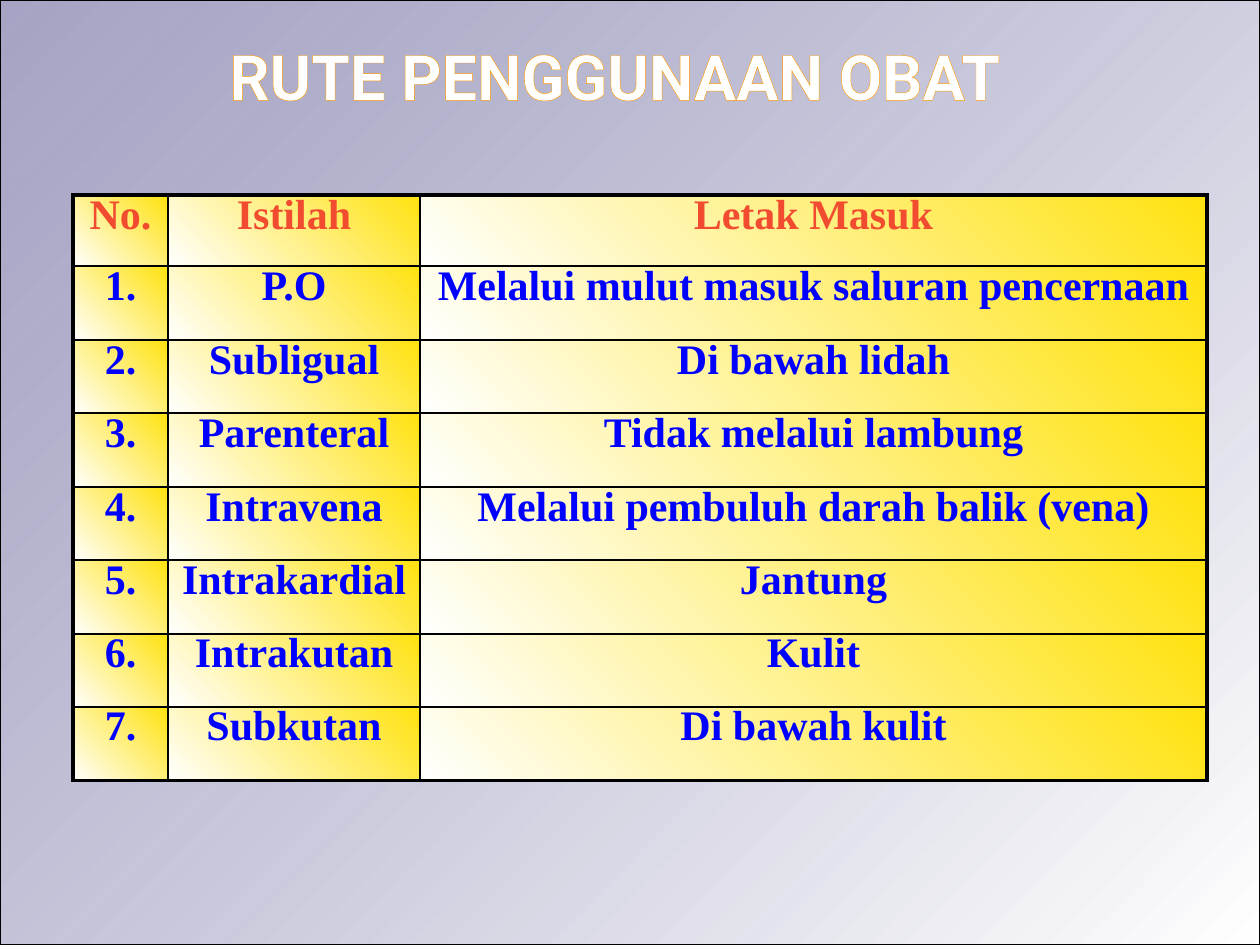
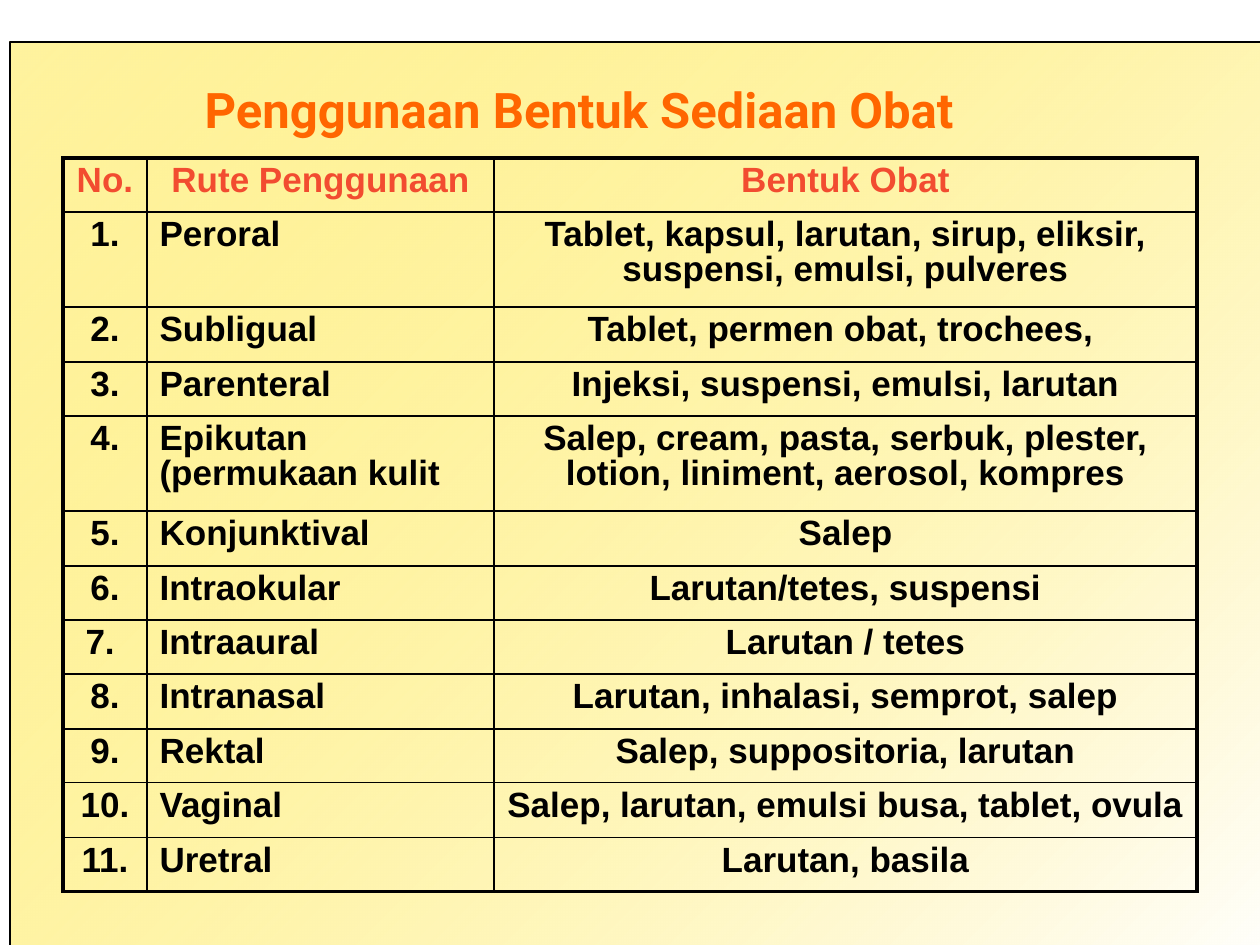
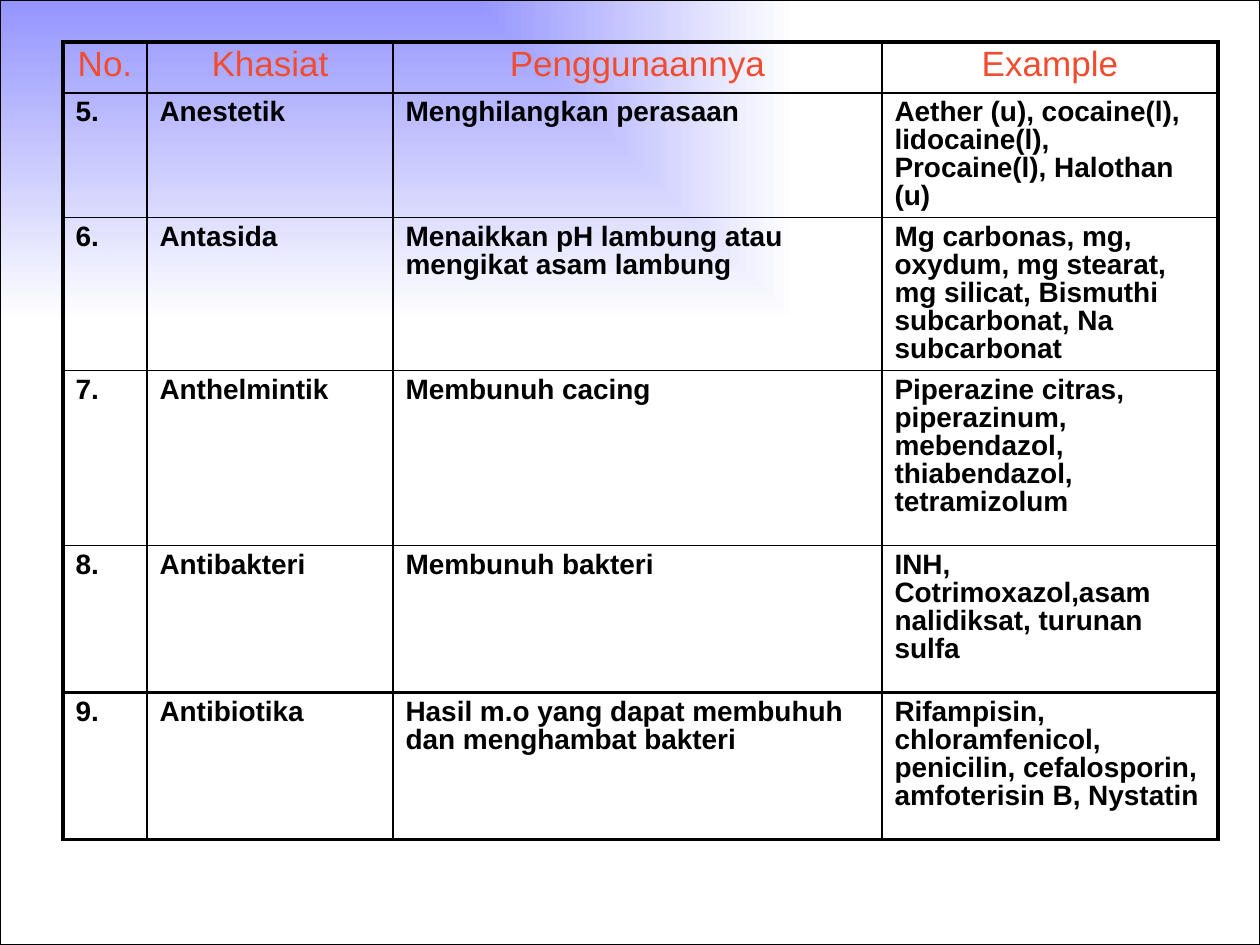
"""Build three slides of tables on drug routes, dosage forms and drug effects."""
from lxml import etree
from pptx import Presentation
from pptx import util as u
from pptx.dml.color import RGBColor
from pptx.enum import shapes, text
from pptx.oxml import ns

PX = 914400 / 126
WIDTH, HEIGHT = 1260, 945
BLACK, WHITE, HEADER = "000000", "FFFFFF", "F24C30"
YELLOW = "FFE20F"
THIN, THICK = 1, 2.25
LEFT, CENTER = text.PP_ALIGN.LEFT, text.PP_ALIGN.CENTER
TITLE_LAYOUT, BLANK_LAYOUT = 5, 6

DIAGONAL = {"ang": "2700000"}
RISING = {"ang": "18900000"}

SLIDES = [
    {
        "panel": {"at": (0, 0), "stops": [("8583AF", 73), (WHITE, 100)], "linear": DIAGONAL},
        "title": {"text": "RUTE PENGGUNAAN OBAT", "at": (179, 31, 872, 78),
                  "size": 36, "color": WHITE, "outline": "FF9900"},
        "table": {
            "at": (73, 195), "columns": [95, 252, 787],
            "heights": [71, 74, 73, 74, 73, 74, 73, 74],
            "font": "Times New Roman", "spacing": 0.75, "sizes": (24, 24),
            "header_bold": True, "color": "0000FF", "align": [CENTER] * 3,
            "stops": [(WHITE, 100), (YELLOW, 100)], "thick_rows": [],
            "rows": [
                ("No.", "Istilah", "Letak Masuk"),
                ("1.", "P.O", "Melalui mulut masuk saluran pencernaan"),
                ("2.", "Subligual", "Di bawah lidah"),
                ("3.", "Parenteral", "Tidak melalui lambung"),
                ("4.", "Intravena", "Melalui pembuluh darah balik (vena)"),
                ("5.", "Intrakardial", "Jantung"),
                ("6.", "Intrakutan", "Kulit"),
                ("7.", "Subkutan", "Di bawah kulit"),
            ],
        },
    },
    {
        "panel": {"at": (10, 42), "stops": [(YELLOW, 40), (WHITE, 100)], "linear": DIAGONAL},
        "title": {"text": "Penggunaan Bentuk Sediaan Obat", "at": (179, 73, 800, 94),
                  "size": 28, "color": "FF6600", "outline": BLACK},
        "table": {
            "at": (63, 158), "columns": [84, 347, 703],
            "heights": [54, 95, 55, 54, 95, 55, 54, 54, 55, 54, 55, 54],
            "font": "Arial", "spacing": 0.9, "sizes": (20, 20),
            "header_bold": True, "color": BLACK, "align": [CENTER, LEFT, CENTER],
            "stops": None, "thick_rows": [],
            "rows": [
                ("No.", "Rute Penggunaan", "Bentuk Obat"),
                ("1.", "Peroral",
                 "Tablet, kapsul, larutan, sirup, eliksir, suspensi, emulsi, pulveres"),
                ("2.", "Subligual", "Tablet, permen obat, trochees, "),
                ("3.", "Parenteral", "Injeksi, suspensi, emulsi, larutan"),
                ("4.", "Epikutan (permukaan kulit",
                 "Salep, cream, pasta, serbuk, plester, lotion, liniment, aerosol, kompres"),
                ("5.", "Konjunktival", "Salep"),
                ("6.", "Intraokular", "Larutan/tetes, suspensi"),
                ("7. ", "Intraaural", "Larutan / tetes"),
                ("8.", "Intranasal", "Larutan, inhalasi, semprot, salep"),
                ("9.", "Rektal", "Salep, suppositoria, larutan"),
                ("10.", "Vaginal", "Salep, larutan, emulsi busa, tablet, ovula"),
                ("11.", "Uretral", "Larutan, basila"),
            ],
        },
    },
    {
        "panel": {"at": (0, 0), "stops": [("0000FF", 62), (WHITE, 62)], "linear": None},
        "title": None,
        "table": {
            "at": (63, 42), "columns": [84, 246, 489, 336],
            "heights": [51, 124, 153, 175, 147, 147],
            "font": "Arial", "spacing": 0.9, "sizes": (20, 16),
            "header_bold": False, "color": BLACK, "align": [LEFT] * 4,
            "stops": None, "thick_rows": [4],
            "rows": [
                ("No.", "Khasiat", "Penggunaannya", "Example"),
                ("5.", "Anestetik", "Menghilangkan perasaan",
                 "Aether (u), cocaine(l), lidocaine(l), Procaine(l), Halothan (u)"),
                ("6.", "Antasida", "Menaikkan pH lambung atau mengikat asam lambung",
                 "Mg carbonas, mg, oxydum, mg stearat, mg silicat, "
                 "Bismuthi subcarbonat, Na subcarbonat"),
                ("7.", "Anthelmintik", "Membunuh cacing",
                 "Piperazine citras, piperazinum, mebendazol, thiabendazol, tetramizolum"),
                ("8.", "Antibakteri", "Membunuh bakteri",
                 "INH, Cotrimoxazol,asam nalidiksat, turunan sulfa"),
                ("9.", "Antibiotika", "Hasil m.o yang dapat membuhuh dan menghambat bakteri",
                 "Rifampisin, chloramfenicol, penicilin, cefalosporin, "
                 "amfoterisin B, Nystatin"),
            ],
        },
    },
]


def px(length):
    """Turn pixels into EMU."""
    return u.Emu(round(length * PX))


def rgb(color):
    """Turn a hex string into a colour."""
    return RGBColor.from_string(color)


def child(parent, tag, **attributes):
    """Append a drawing element to its parent."""
    return etree.SubElement(parent, ns.qn("a:" + tag), attributes)


def make_line(tag, color, width):
    """Make a solid line element."""
    line = etree.Element(ns.qn("a:" + tag), w=str(int(u.Pt(width))))
    child(child(line, "solidFill"), "srgbClr", val=color)
    return line


def set_gradient(fill, properties, stops, linear):
    """Fill a shape or cell with a linear gradient, or one from its top left corner."""
    fill.background()
    gradient = etree.Element(ns.qn("a:gradFill"), rotWithShape="1")
    stop_list = child(gradient, "gsLst")
    for index, (color, alpha) in enumerate(stops):
        stop = child(stop_list, "gs", pos=str(index * 100000))
        child(child(stop, "srgbClr", val=color), "alpha", val=str(alpha * 1000))
    if linear:
        child(gradient, "lin", scaled="1", **linear)
    else:
        child(child(gradient, "path", path="rect"), "fillToRect", r="100000", b="100000")
    properties.replace(properties.find(ns.qn("a:noFill")), gradient)


def set_font(paragraph, name, size, color, bold):
    """Format every run of a paragraph."""
    for span in paragraph.runs:
        span.font.name = name
        span.font.size = u.Pt(size)
        span.font.bold = bold
        span.font.color.rgb = rgb(color)


def add_panel(page, panel):
    """Add the gradient panel behind everything else."""
    left, top = panel["at"]
    box = page.shapes.add_shape(shapes.MSO_SHAPE.RECTANGLE, px(left), px(top),
                                px(WIDTH), px(HEIGHT))
    box.shadow.inherit = False
    box.line.color.rgb = rgb(BLACK)
    box.line.width = u.Pt(0.75)
    set_gradient(box.fill, box.element.spPr, panel["stops"], panel["linear"])
    page.shapes.element.insert(2, box.element)


def set_title(page, title):
    """Place and format the outlined title."""
    box = page.shapes.title
    box.left, box.top, box.width, box.height = map(px, title["at"])
    frame = box.text_frame
    frame.text = title["text"]
    frame.word_wrap = False
    frame.auto_size = text.MSO_AUTO_SIZE.NONE
    frame.vertical_anchor = text.MSO_ANCHOR.TOP
    para = frame.paragraphs[0]
    para.alignment = CENTER
    set_font(para, "Roboto", title["size"], title["color"], True)
    for span in para.runs:
        span.font._element.insert(0, make_line("ln", title["outline"], 0.75))


def set_borders(cell, thick_sides):
    """Draw the four borders of a cell."""
    properties = cell._tc.get_or_add_tcPr()
    for index, side in enumerate("LRTB"):
        width = THICK if side in thick_sides else THIN
        properties.insert(index, make_line("ln" + side, BLACK, width))


def add_table(page, data):
    """Add a ruled table with a coloured header row."""
    rows, columns, heights = data["rows"], data["columns"], data["heights"]
    left, top = data["at"]
    table = page.shapes.add_table(len(rows), len(columns), px(left), px(top),
                                  px(sum(columns)), px(sum(heights))).table
    table.first_row = table.horz_banding = False
    for column, width in zip(table.columns, columns):
        column.width = px(width)
    last_row, last_column = len(rows) - 1, len(columns) - 1
    for r, values in enumerate(rows):
        table.rows[r].height = px(heights[r])
        for c, value in enumerate(values):
            cell = table.cell(r, c)
            cell.text_frame.text = value
            para = cell.text_frame.paragraphs[0]
            para.line_spacing = data["spacing"]
            para.alignment = CENTER if r == 0 else data["align"][c]
            set_font(para, data["font"], data["sizes"][r > 0],
                     data["color"] if r else HEADER, r > 0 or data["header_bold"])
            if data["stops"]:
                set_gradient(cell.fill, cell._tc.get_or_add_tcPr(), data["stops"], RISING)
            else:
                cell.fill.background()
            edges = {"L": c == 0, "R": c == last_column,
                     "T": r == 0 or r - 1 in data["thick_rows"],
                     "B": r == last_row or r in data["thick_rows"]}
            set_borders(cell, [side for side, thick in edges.items() if thick])


def main():
    """Build and save the deck."""
    deck = Presentation()
    deck.slide_width, deck.slide_height = px(WIDTH), px(HEIGHT)
    for content in SLIDES:
        layout = TITLE_LAYOUT if content["title"] else BLANK_LAYOUT
        page = deck.slides.add_slide(deck.slide_layouts[layout])
        add_panel(page, content["panel"])
        if content["title"]:
            set_title(page, content["title"])
        add_table(page, content["table"])
    deck.save("out.pptx")


if __name__ == "__main__":
    main()
